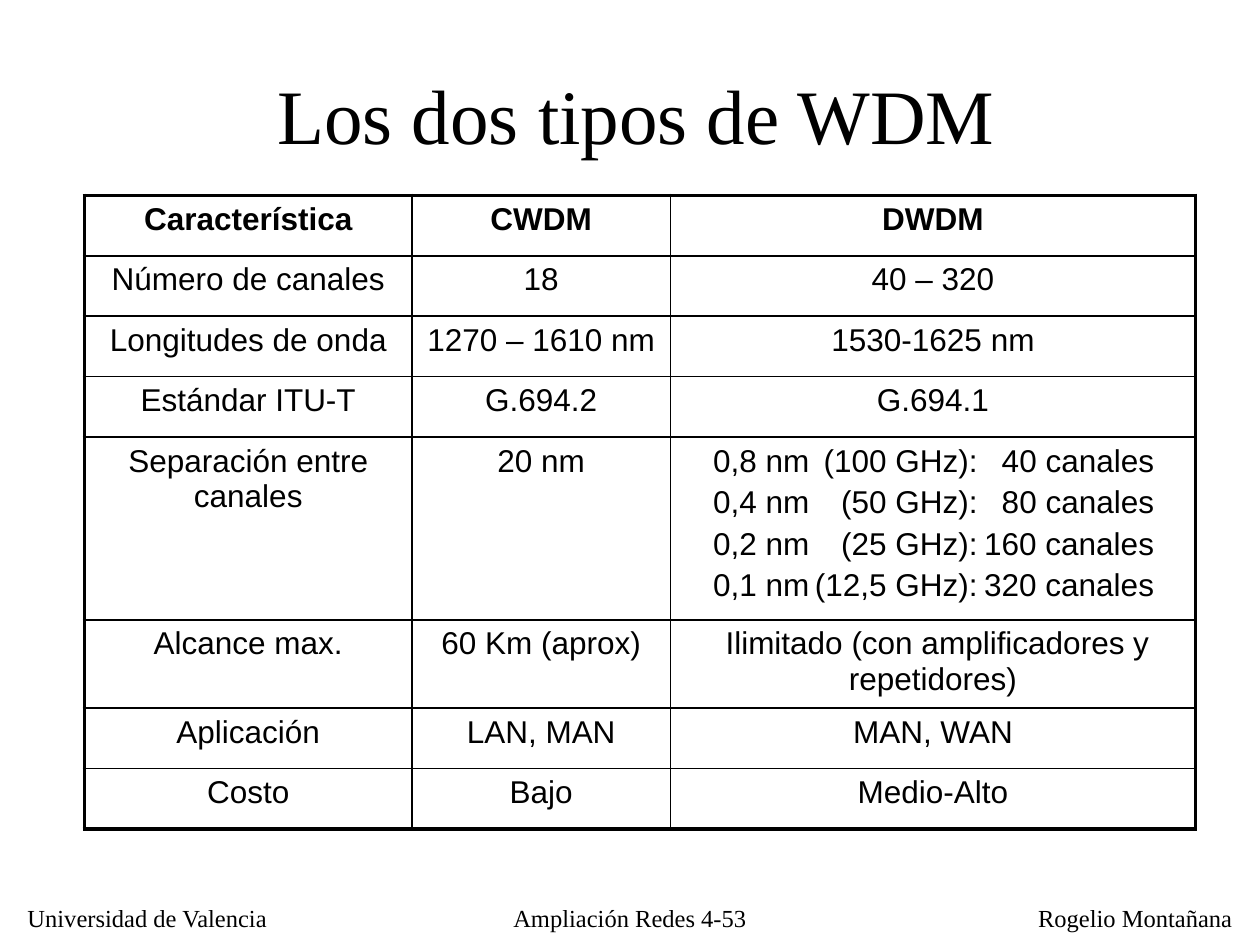
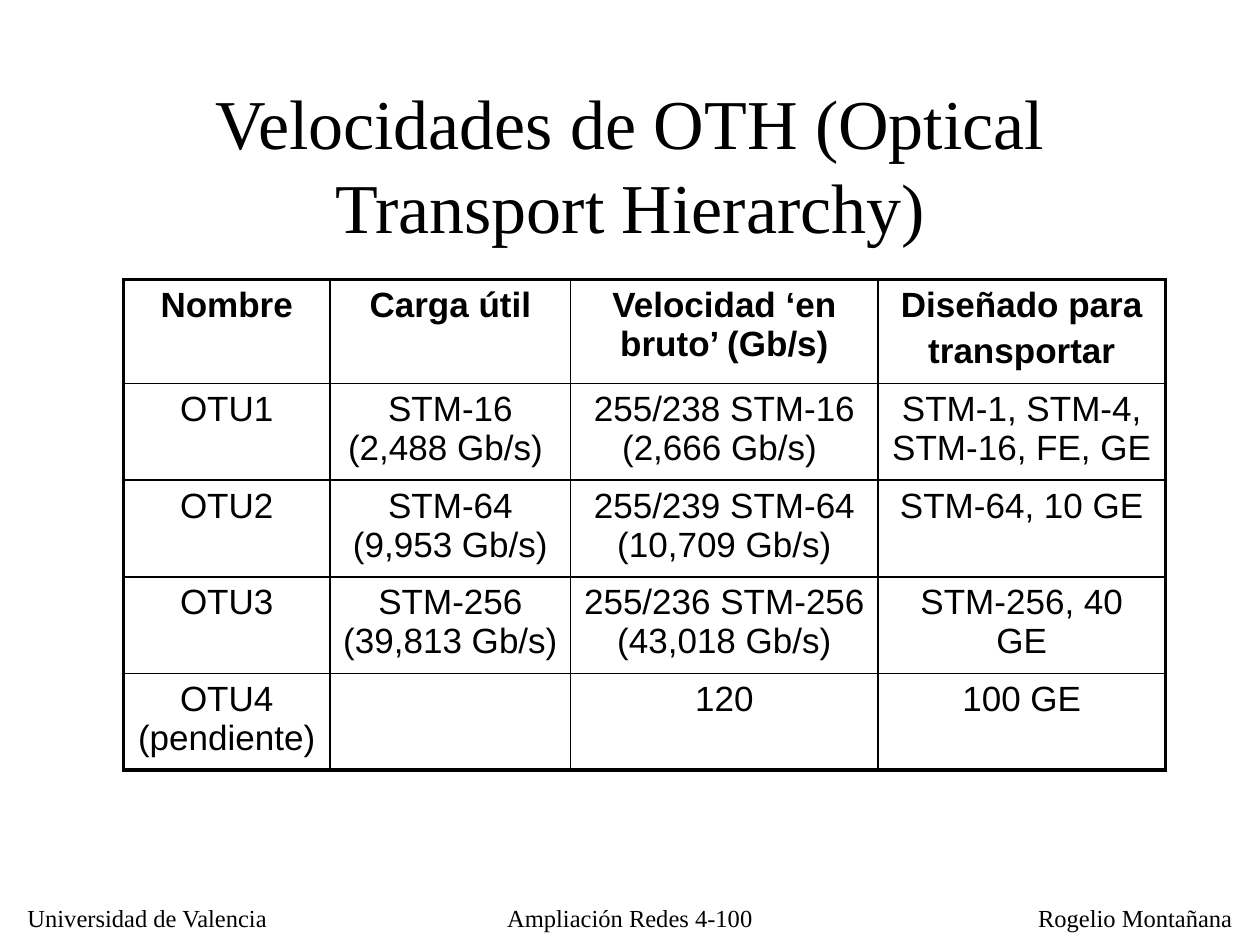
"""Build two slides that compare WDM types and list OTH rates."""
from dataclasses import dataclass

from lxml import etree
from pptx import Presentation
from pptx.dml.color import RGBColor
from pptx.enum.text import MSO_ANCHOR, PP_ALIGN
from pptx.oxml.ns import qn
from pptx.slide import Slide
from pptx.table import _Cell
from pptx.text.text import _Paragraph
from pptx.util import Inches, Pt

LEFT, CENTER = PP_ALIGN.LEFT, PP_ALIGN.CENTER
TOP, MIDDLE = MSO_ANCHOR.TOP, MSO_ANCHOR.MIDDLE
COLORS = {"ink": "000000"}
SERIF, SANS = "Times New Roman", "Arial"
OUTER_LINE, INNER_LINE = Pt(2.25), Pt(1)
SPACING_RATIO = 0.2
CHANNEL_INDENT = 0.34
CHANNEL_TABS = (2.1, 3.5)


@dataclass(frozen=True)
class Label:
    text: str
    left: float
    top: float
    width: float
    height: float
    size: int = 14
    align: PP_ALIGN = CENTER
    anchor: MSO_ANCHOR = TOP
    wrap: bool = True


@dataclass(frozen=True)
class Grid:
    left: float
    top: float
    columns: tuple[float, ...]
    heights: tuple[float, ...]
    size: int
    rows: tuple[tuple[str, ...], ...]


@dataclass(frozen=True)
class Page:
    title: Label
    grid: Grid
    number: str


FOOTERS = (
    Label("Universidad de Valencia", 0.12, 7.12, 2.13, 0.33, align=LEFT, wrap=False),
    Label("Rogelio Montañana", 8.14, 7.12, 1.74, 0.33, align=LEFT, wrap=False),
)

WDM = Page(
    Label("Los dos tipos de WDM", 0.8, 0.28, 8.5, 1.25, 44, anchor=MIDDLE),
    Grid(0.67, 1.55, (2.6, 2.05, 4.17),
         (0.48, 0.48, 0.48, 0.48, 1.37, 0.66, 0.48, 0.48), 18, (
             ("Característica", "CWDM", "DWDM"),
             ("Número de canales", "18", "40 – 320"),
             ("Longitudes de onda", "1270 – 1610 nm", "1530-1625 nm"),
             ("Estándar ITU-T", "G.694.2", "G.694.1"),
             ("Separación entre canales", "20 nm",
              "0,8 nm\t(100 GHz):\t40 canales\n"
              "0,4 nm\t(50 GHz):\t80 canales\n"
              "0,2 nm\t(25 GHz):\t160 canales\n"
              "0,1 nm\t(12,5 GHz):\t320 canales"),
             ("Alcance max.", "60 Km (aprox)",
              " Ilimitado (con amplificadores y repetidores)"),
             ("Aplicación", "LAN, MAN", "MAN, WAN"),
             ("Costo", "Bajo", "Medio-Alto"),
         )),
    "4-53",
)

OTH = Page(
    Label("Velocidades de OTH (Optical Transport Hierarchy)",
          0.75, 0.67, 8.5, 1.25, 40, anchor=MIDDLE),
    Grid(0.98, 2.22, (1.64, 1.91, 2.44, 2.28), (0.78, 0.72, 0.72, 0.72, 0.72), 20, (
        ("Nombre", "Carga útil", "Velocidad ‘en bruto’ (Gb/s)",
         "Diseñado para\ntransportar"),
        ("OTU1", "STM-16 (2,488 Gb/s) ", "255/238 STM-16 (2,666 Gb/s) ",
         "STM-1, STM-4, STM-16, FE, GE"),
        ("OTU2", "STM-64 (9,953 Gb/s)", "255/239 STM-64 (10,709 Gb/s)",
         "STM-64, 10 GE"),
        ("OTU3", "STM-256 (39,813 Gb/s) ", "255/236 STM-256 (43,018 Gb/s)",
         "STM-256, 40 GE"),
        ("OTU4 (pendiente)", "", "120", "100 GE"),
    )),
    "4-100",
)


def add_run(paragraph: _Paragraph, text: str, face: str, size: int,
            bold: bool = False) -> None:
    run = paragraph.add_run()
    run.text = text
    run.font.name = face
    run.font.size = Pt(size)
    run.font.bold = bold
    run.font.color.rgb = RGBColor.from_string(COLORS["ink"])


def add_label(slide: Slide, label: Label) -> None:
    bounds = (label.left, label.top, label.width, label.height)
    frame = slide.shapes.add_textbox(*map(Inches, bounds)).text_frame
    frame.word_wrap = label.wrap
    frame.vertical_anchor = label.anchor
    paragraph = frame.paragraphs[0]
    paragraph.alignment = label.align
    add_run(paragraph, label.text, SERIF, label.size)


def add_tabs(paragraph: _Paragraph) -> None:
    tabs = etree.SubElement(paragraph._p.get_or_add_pPr(), qn("a:tabLst"))
    for stop in CHANNEL_TABS:
        etree.SubElement(tabs, qn("a:tab"), pos=str(Inches(stop)), algn="r")


def set_borders(cell: _Cell, outer_sides: dict[str, bool]) -> None:
    properties = cell._tc.get_or_add_tcPr()
    for order, (side, outer) in enumerate(outer_sides.items()):
        line = etree.Element(qn(f"a:ln{side}"), w=str(OUTER_LINE if outer else INNER_LINE))
        fill = etree.SubElement(line, qn("a:solidFill"))
        etree.SubElement(fill, qn("a:srgbClr"), val=COLORS["ink"])
        properties.insert(order, line)


def fill_cell(cell: _Cell, text: str, size: int, bold: bool) -> None:
    cell.fill.background()
    tabbed = "\t" in text
    if tabbed:
        cell.margin_left = Inches(CHANNEL_INDENT)
    for index, entry in enumerate(text.split("\n")):
        frame = cell.text_frame
        paragraph = frame.add_paragraph() if index else frame.paragraphs[0]
        paragraph.alignment = LEFT if tabbed else CENTER
        if index:
            paragraph.space_before = Pt(size * SPACING_RATIO)
        if tabbed:
            add_tabs(paragraph)
        if entry:
            add_run(paragraph, entry, SANS, size, bold)


def add_grid(slide: Slide, grid: Grid) -> None:
    last_row, last_column = len(grid.rows) - 1, len(grid.columns) - 1
    bounds = (grid.left, grid.top, sum(grid.columns), sum(grid.heights))
    table = slide.shapes.add_table(
        len(grid.rows), len(grid.columns), *map(Inches, bounds)).table
    table.first_row = table.horz_banding = False
    for column, width in zip(table.columns, grid.columns):
        column.width = Inches(width)
    for row, height in zip(table.rows, grid.heights):
        row.height = Inches(height)
    for r, entries in enumerate(grid.rows):
        for c, text in enumerate(entries):
            cell = table.cell(r, c)
            fill_cell(cell, text, grid.size, bold=r == 0)
            set_borders(cell, {"L": c == 0, "R": c == last_column,
                               "T": r == 0, "B": r == last_row})


def main() -> None:
    deck = Presentation()
    deck.slide_width, deck.slide_height = Inches(10), Inches(7.5)
    for page in (WDM, OTH):
        slide = deck.slides.add_slide(deck.slide_layouts[6])
        page_footer = Label(f"Ampliación Redes {page.number}", 3.9, 7.12, 2.2, 0.31)
        for label in (*FOOTERS, page.title, page_footer):
            add_label(slide, label)
        add_grid(slide, page.grid)
    deck.save("out.pptx")


if __name__ == "__main__":
    main()
